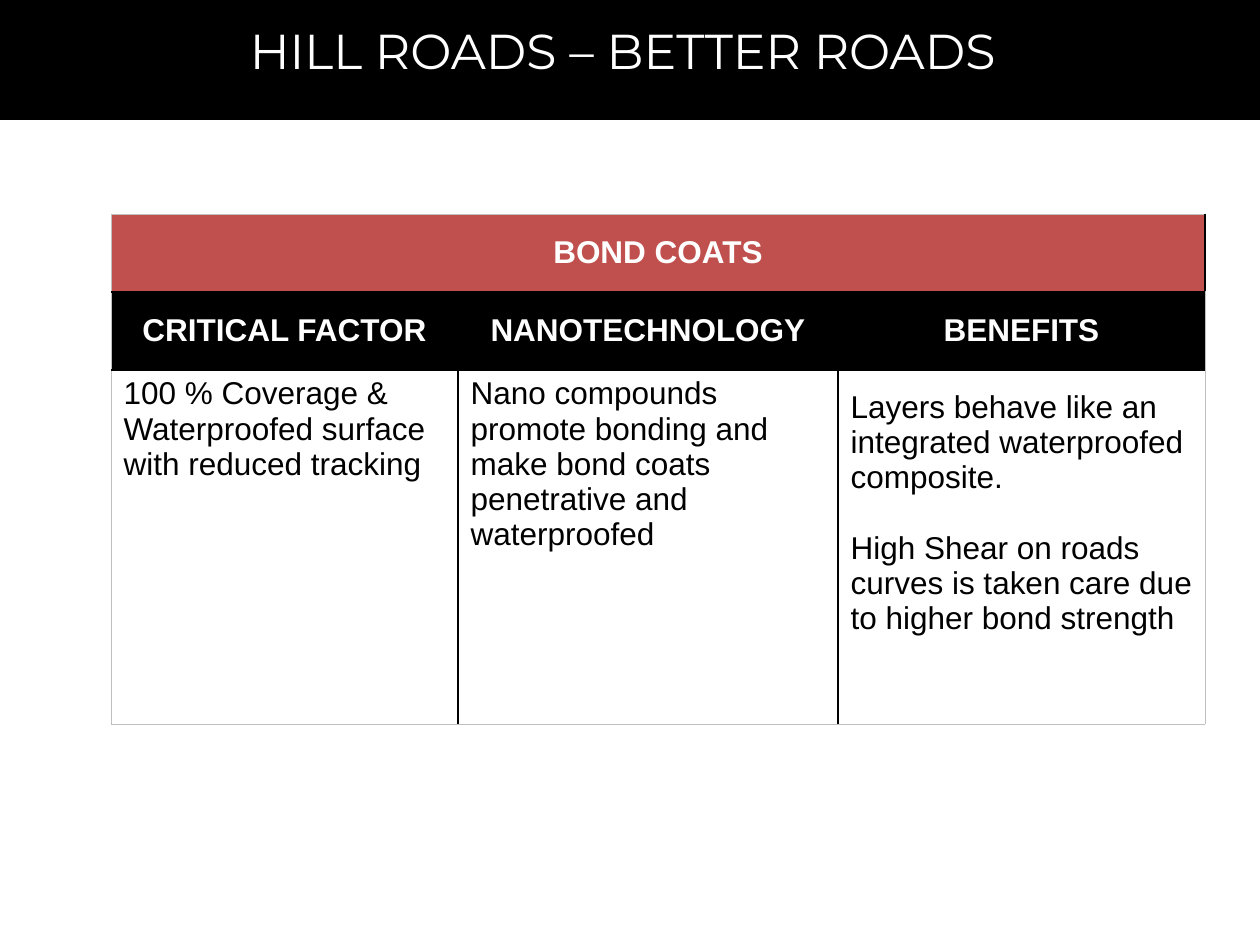
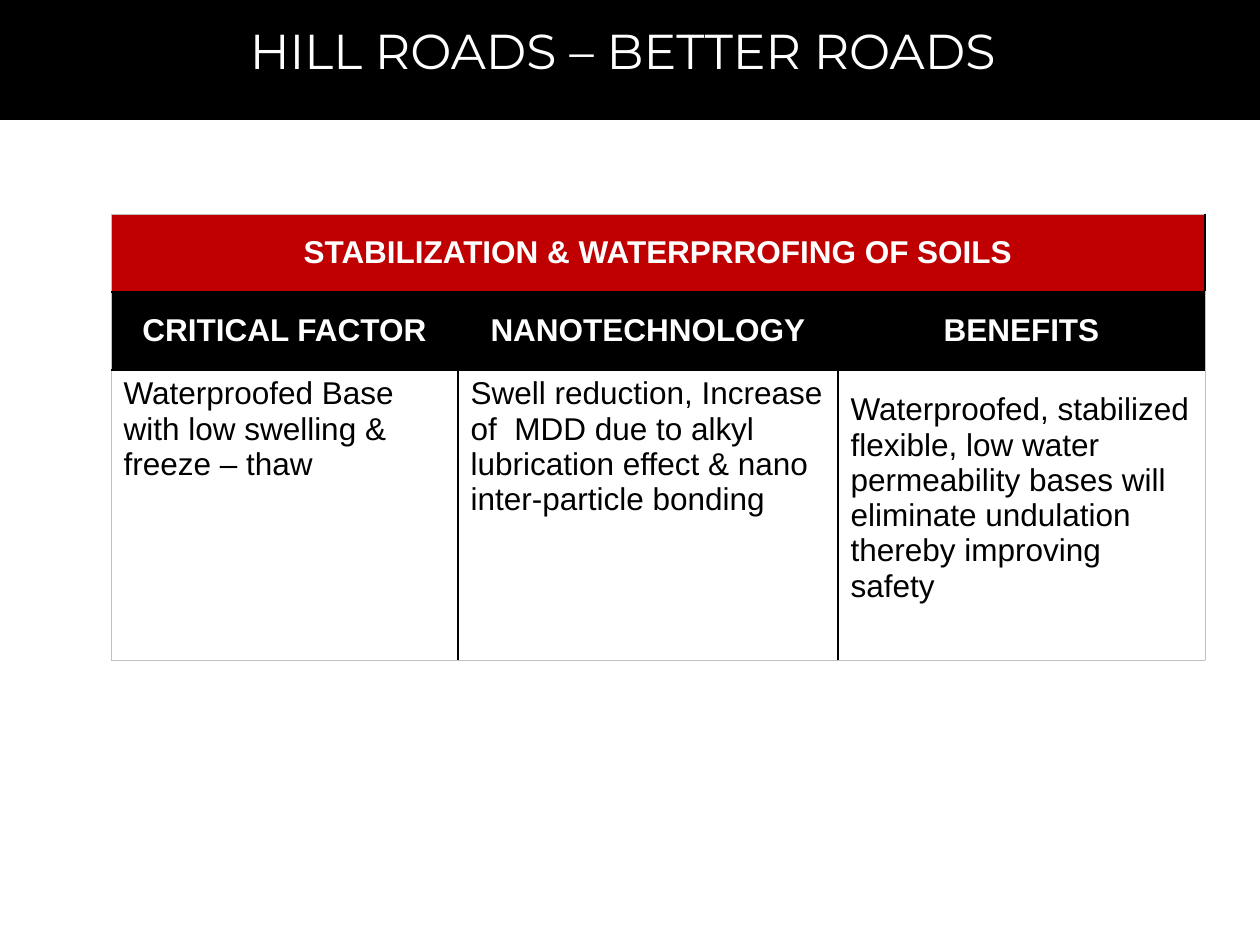
from pptx import Presentation, util as u
from pptx.dml.color import RGBColor
from pptx.enum import shapes, text
from lxml import etree
from pptx.oxml.ns import qn

BLACK = RGBColor(0x00, 0x00, 0x00)
WHITE = RGBColor(0xFF, 0xFF, 0xFF)
GREY = RGBColor(0xBF, 0xBF, 0xBF)
BRICK = RGBColor(0xC0, 0x50, 0x4D)
RED = RGBColor(0xC0, 0x00, 0x00)

TITLE = "HILL ROADS – BETTER ROADS "
HEADS = ["CRITICAL FACTOR", "NANOTECHNOLOGY", "BENEFITS"]
WIDTHS = [347, 380, 367]
HEAD_H = 78


def px(n):
    return u.Inches(n / 126)


class Deck:
    """Holds the shared style and the current slide."""

    def __init__(self):
        self.prs = Presentation()
        self.prs.slide_width, self.prs.slide_height = px(1260), px(945)
        self.slide = None

    def page(self):
        self.slide = self.prs.slides.add_slide(self.prs.slide_layouts[5])
        self.band()
        self.title()

    def style(self, par, size, font, color, bold=False):
        for run in par.runs:
            run.font.size, run.font.name = u.Pt(size), font
            run.font.color.rgb, run.font.bold = color, bold

    def band(self):
        tree = self.slide.shapes
        band = tree.add_shape(shapes.MSO_SHAPE.RECTANGLE, 0, 0, px(1260), px(120))
        band.shadow.inherit = False
        band.fill.solid()
        band.fill.fore_color.rgb = BLACK
        band.line.fill.background()
        # Send the band behind the title
        tree.element.insert(2, band.element)

    def title(self):
        box = self.slide.shapes.title
        box.left, box.top, box.width, box.height = map(px, (54, 14, 1150, 72))
        frame = box.text_frame
        frame.text = TITLE
        frame.auto_size = text.MSO_AUTO_SIZE.NONE
        frame.vertical_anchor = text.MSO_ANCHOR.MIDDLE
        frame.paragraphs[0].alignment = text.PP_ALIGN.CENTER
        self.style(frame.paragraphs[0], 28, "Montserrat", WHITE)

    def edge(self, cell, side, color, width):
        line = etree.SubElement(cell._tc.get_or_add_tcPr(), qn("a:ln" + side),
                                w=str(u.Pt(width)))
        fill = etree.SubElement(line, qn("a:solidFill"))
        etree.SubElement(fill, qn("a:srgbClr"), val=str(color))

    def edges(self, cell, row, col):
        outer = {"L": col == 0, "R": col == 2, "T": row == 0, "B": row == 2}
        for side, out in outer.items():
            self.edge(cell, side, GREY if out else BLACK, 0.5 if out else 1)

    def cell(self, cell, words, fill, head):
        cell.fill.solid()
        cell.fill.fore_color.rgb = fill
        frame = cell.text_frame
        frame.text = words
        if head:
            cell.vertical_anchor = text.MSO_ANCHOR.MIDDLE
        for par in frame.paragraphs:
            par.alignment = text.PP_ALIGN.CENTER if head else text.PP_ALIGN.LEFT
            self.style(par, 18, "Arial", WHITE if head else BLACK, head)

    def table(self, topic, color, body, height, lift):
        rows = [HEAD_H, HEAD_H, height]
        grid = self.slide.shapes.add_table(
            3, 3, px(111), px(214), px(sum(WIDTHS)), px(sum(rows))).table
        grid.first_row = grid.horz_banding = False
        for col, width in zip(grid.columns, WIDTHS):
            col.width = px(width)
        for row, tall in zip(grid.rows, rows):
            row.height = px(tall)

        # Topic row, heading row, body row
        grid.cell(0, 0).merge(grid.cell(0, 2))
        plan = [([topic, "", ""], color), (HEADS, BLACK), (body, WHITE)]
        for r, (line, fill) in enumerate(plan):
            for c, words in enumerate(line):
                cell = grid.cell(r, c)
                self.edges(cell, r, c)
                self.cell(cell, words, fill, r < 2)

        # Benefits sit a little above the middle
        last = grid.cell(2, 2)
        last.vertical_anchor = text.MSO_ANCHOR.MIDDLE
        last.margin_bottom = px(6 + lift)
        for par in last.text_frame.paragraphs[1:]:
            par.space_before = u.Pt(20)


def main():
    deck = Deck()

    # Bond coats
    deck.page()
    deck.table("BOND COATS", BRICK, [
        "100 % Coverage &\nWaterproofed surface with reduced tracking",
        "Nano compounds promote bonding and make bond coats penetrative "
        "and waterproofed",
        "Layers behave like an integrated waterproofed composite.\n"
        "High Shear on roads curves is taken care due to higher bond strength",
    ], 354, 68)

    # Soils
    deck.page()
    deck.table("STABILIZATION & WATERPRROFING OF SOILS", RED, [
        "Waterproofed Base with low swelling & freeze – thaw",
        "Swell reduction, Increase of  MDD due to alkyl lubrication effect "
        "& nano inter-particle bonding",
        "Waterproofed, stabilized flexible, low water permeability bases "
        "will eliminate undulation thereby improving safety",
    ], 290, 34)

    deck.prs.save("out.pptx")


if __name__ == "__main__":
    main()
